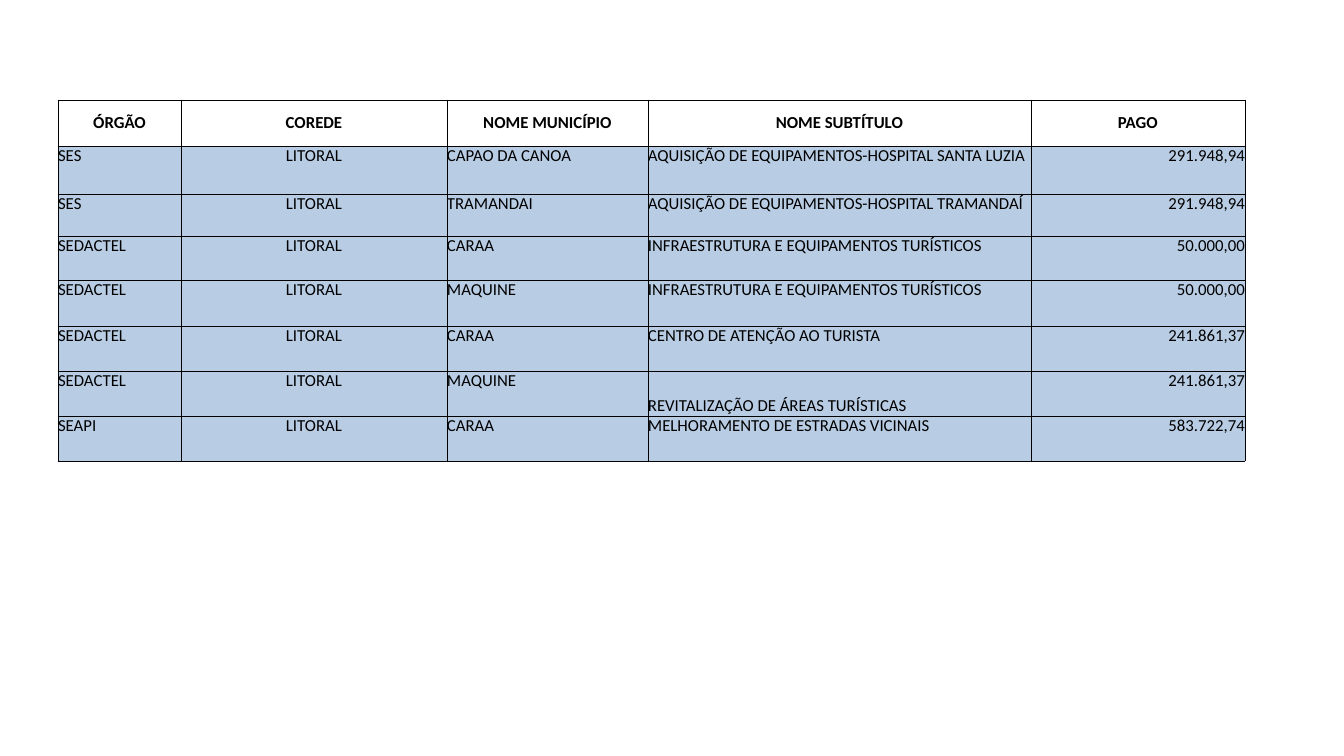
"""Build a slide with a table of regional payments by agency and town."""
from lxml import etree
from pptx import Presentation, util as u
from pptx.dml import color
from pptx.enum import text
from pptx.oxml import ns

HEADINGS = ("ÓRGÃO", "COREDE", "NOME MUNICÍPIO", "NOME SUBTÍTULO", "PAGO")
PAYMENTS = [
    ("SES", "LITORAL", "CAPAO DA CANOA", "AQUISIÇÃO DE EQUIPAMENTOS-HOSPITAL SANTA LUZIA", "291.948,94"),
    ("SES", "LITORAL", "TRAMANDAI", "AQUISIÇÃO DE EQUIPAMENTOS-HOSPITAL TRAMANDAÍ", "291.948,94"),
    ("SEDACTEL", "LITORAL", "CARAA", "INFRAESTRUTURA E EQUIPAMENTOS TURÍSTICOS", "50.000,00"),
    ("SEDACTEL", "LITORAL", "MAQUINE", "INFRAESTRUTURA E EQUIPAMENTOS TURÍSTICOS", "50.000,00"),
    ("SEDACTEL", "LITORAL", "CARAA", "CENTRO DE ATENÇÃO AO TURISTA", "241.861,37"),
    ("SEDACTEL", "LITORAL", "MAQUINE", "REVITALIZAÇÃO DE ÁREAS TURÍSTICAS", "241.861,37"),
    ("SEAPI", "LITORAL", "CARAA", "MELHORAMENTO DE ESTRADAS VICINAIS", "583.722,74"),
]
COLUMN_WIDTHS = (123, 266, 201, 383, 214)
ROW_HEIGHTS = (46, 48, 42, 44, 46, 45, 45, 45)
LEFT, TOP = 58, 100
BOTTOM_ANCHORED = "REVITALIZAÇÃO DE ÁREAS TURÍSTICAS"
BLACK, WHITE, BLUE = "000000", "FFFFFF", "B8CCE4"
ALIGN, ANCHOR = text.PP_ALIGN, text.MSO_ANCHOR
COLUMN_ALIGN = (ALIGN.LEFT, ALIGN.CENTER, ALIGN.LEFT, ALIGN.LEFT, ALIGN.RIGHT)


def px(length):
    return u.Emu(round(length * 914400 / 100.8))


def paint(target, value):
    target.rgb = color.RGBColor.from_string(value)


def add_borders(cell):
    properties = cell._tc.get_or_add_tcPr()
    for side in ("lnL", "lnR", "lnT", "lnB"):
        line = etree.SubElement(properties, ns.qn(f"a:{side}"), w=str(u.Pt(0.5)))
        fill = etree.SubElement(line, ns.qn("a:solidFill"))
        etree.SubElement(fill, ns.qn("a:srgbClr"), val=BLACK)


def fill_cell(cell, words, fill, align, anchor, bold):
    add_borders(cell)
    cell.fill.solid()
    paint(cell.fill.fore_color, fill)
    cell.margin_left = cell.margin_right = cell.margin_top = cell.margin_bottom = 0
    cell.vertical_anchor = anchor
    para = cell.text_frame.paragraphs[0]
    para.alignment = align
    span = para.add_run()
    span.text = words
    span.font.name, span.font.size, span.font.bold = "Calibri", u.Pt(12), bold
    paint(span.font.color, BLACK)


def main():
    deck = Presentation()
    deck.slide_width, deck.slide_height = px(1344), px(756)
    page = deck.slides.add_slide(deck.slide_layouts[6])
    table = page.shapes.add_table(
        len(ROW_HEIGHTS), len(COLUMN_WIDTHS), px(LEFT), px(TOP),
        px(sum(COLUMN_WIDTHS)), px(sum(ROW_HEIGHTS))).table
    table.first_row = table.horz_banding = False
    for column, width in zip(table.columns, COLUMN_WIDTHS):
        column.width = px(width)
    for row, height in zip(table.rows, ROW_HEIGHTS):
        row.height = px(height)
    for column, heading in enumerate(HEADINGS):
        fill_cell(table.cell(0, column), heading, WHITE, ALIGN.CENTER, ANCHOR.MIDDLE, True)
    for row, payment in enumerate(PAYMENTS, start=1):
        for column, words in enumerate(payment):
            anchor = ANCHOR.BOTTOM if words == BOTTOM_ANCHORED else ANCHOR.TOP
            fill_cell(table.cell(row, column), words, BLUE, COLUMN_ALIGN[column], anchor, False)
    deck.save("out.pptx")


if __name__ == "__main__":
    main()
